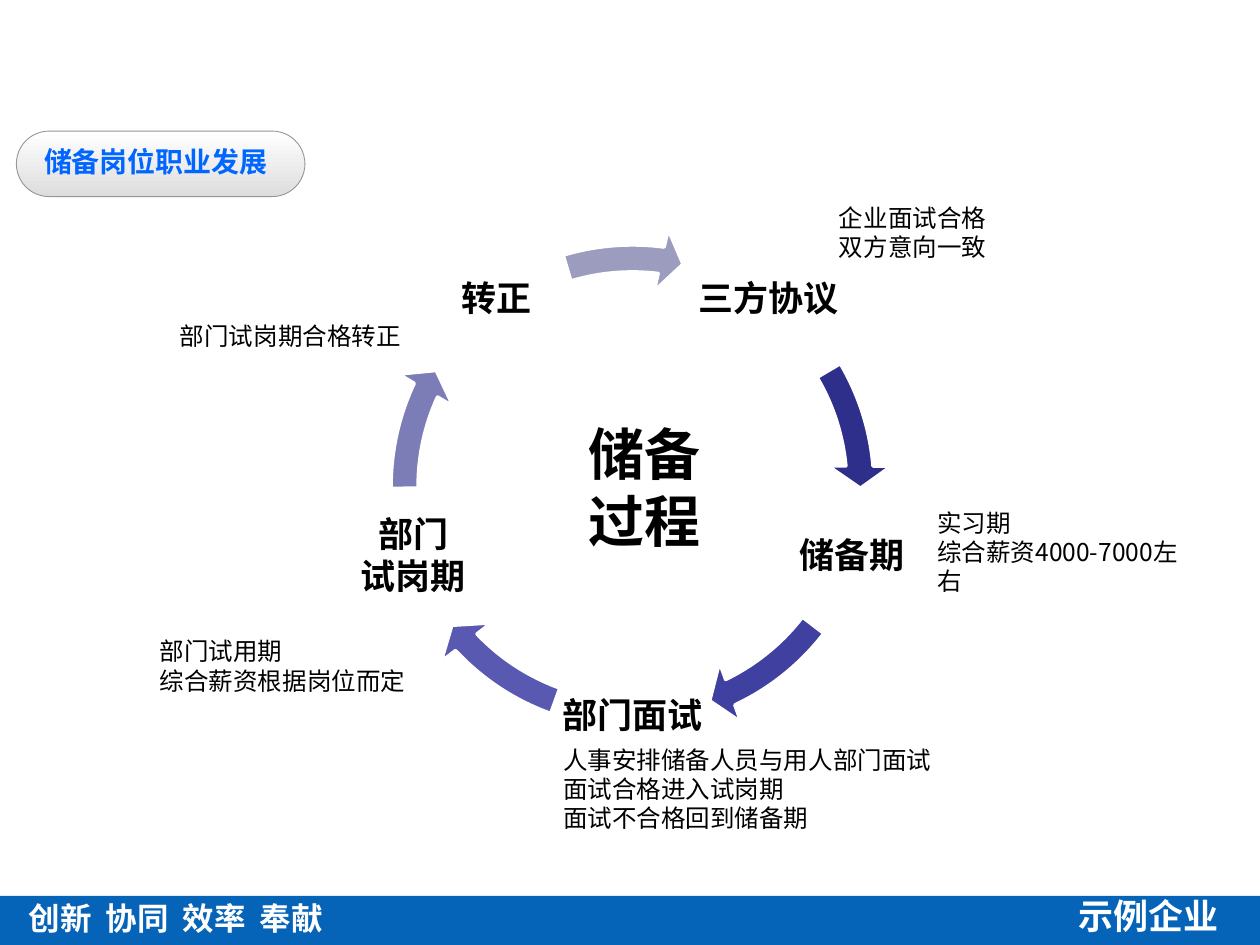
from lxml import etree
from pptx import Presentation
from pptx.dml.color import RGBColor
from pptx.enum.shapes import MSO_SHAPE
from pptx.enum.text import MSO_ANCHOR, PP_ALIGN
from pptx.oxml.ns import qn
from pptx.util import Inches, Pt

FONT = "Noto Sans CJK SC"
WHITE = RGBColor(0xFF, 0xFF, 0xFF)
BLACK = RGBColor(0x00, 0x00, 0x00)
FOOTER_BLUE = RGBColor(0x05, 0x63, 0xB8)
TITLE_BLUE = RGBColor(0x00, 0x66, 0xFF)
PILL_GREY = RGBColor(0xDD, 0xDD, 0xDD)
PILL_EDGE = RGBColor(0x96, 0x96, 0x96)

WIDTH, HEIGHT = 10, 7.5
FOOTER_TOP = 7.11
PILL = (0.13, 1.04, 2.29, 0.52)
RING = (2.96, 1.8, 4.12, 4.12)
STAGE_HEIGHT = 1.1
UPPER_ROW, MIDDLE_ROW, LOWER_ROW = 1.83, 3.87, 5.14
ANGLE_UNIT = 0.6  # one degree as an adjustment value

# left, top, width, lines
STAGES = [
    (5.43, UPPER_ROW, 1.34, ["三方协议"]),
    (6.25, MIDDLE_ROW, 1.02, ["储备期"]),
    (4.4, LOWER_ROW, 1.24, ["部门面试"]),
    (2.68, MIDDLE_ROW, 1.2, ["部门", "试岗期"]),
    (3.39, UPPER_ROW, 1.1, ["转正"]),
]

# start and end in degrees, colour
ARROWS = [
    (329.44, 354.88, RGBColor(0x2E, 0x2E, 0x8B)),
    (37.56, 64.6, RGBColor(0x40, 0x40, 0xA1)),
    (109.8, 136.84, RGBColor(0x59, 0x59, 0xB1)),
    (179.52, 204.96, RGBColor(0x7C, 0x7C, 0xB7)),
    (253.31, 277.23, RGBColor(0x9C, 0x9C, 0xBF)),
]

# left, top, width, height, lines
NOTES = [
    (6.56, 1.56, 1.48, 0.57, ["企业面试合格", "双方意向一致"]),
    (7.34, 3.98, 2.27, 0.57, ["实习期", "综合薪资4000-7000左右"]),
    (4.37, 5.86, 3.28, 0.81,
     ["人事安排储备人员与用人部门面试", "面试合格进入试岗期", "面试不合格回到储备期"]),
    (1.17, 5, 2.27, 0.57, ["部门试用期", "综合薪资根据岗位而定"]),
    (1.33, 2.5, 2.03, 0.34, ["部门试岗期合格转正"]),
]


def inches(place):
    return [Inches(length) for length in place]


def style_paragraph(para, size, color, bold):
    font = para.font
    font.size, font.bold, font.color.rgb = Pt(size), bold, color
    font.name = FONT
    latin = para._p.pPr.find(qn("a:defRPr")).find(qn("a:latin"))
    east_asian = etree.Element(qn("a:ea"), typeface=FONT)
    latin.addnext(east_asian)


def set_margins(frame, side, end):
    frame.margin_left = frame.margin_right = Inches(side)
    frame.margin_top = frame.margin_bottom = Inches(end)


def add_tab_stops(para, step, count):
    stops = etree.SubElement(para._p.get_or_add_pPr(), qn("a:tabLst"))
    for number in range(1, count + 1):
        etree.SubElement(stops, qn("a:tab"), pos=str(Inches(step * number)), algn="l")


def add_text(page, place, lines, size, color=BLACK, bold=False,
             align=PP_ALIGN.LEFT, margins=(0.1, 0.05), anchor=MSO_ANCHOR.TOP,
             line_spacing=None, gap=0, tab_step=None):
    frame = page.shapes.add_textbox(*inches(place)).text_frame
    frame.word_wrap = True
    frame.vertical_anchor = anchor
    set_margins(frame, *margins)
    for index, line in enumerate(lines):
        para = frame.add_paragraph() if index else frame.paragraphs[0]
        para.text = line
        para.alignment = align
        if line_spacing:
            para.line_spacing = line_spacing
        if index:
            para.space_before = Pt(gap)
        if tab_step:
            add_tab_stops(para, tab_step, line.count("\t"))
        style_paragraph(para, size, color, bold)


def add_shape(page, kind, place, color=None):
    shape = page.shapes.add_shape(kind, *inches(place))
    shape.shadow.inherit = False
    if color is not None:
        shape.fill.solid()
        shape.fill.fore_color.rgb = color
    return shape


def add_footer(page):
    bar = add_shape(page, MSO_SHAPE.RECTANGLE,
                    (0, FOOTER_TOP, WIDTH, HEIGHT - FOOTER_TOP), FOOTER_BLUE)
    bar.line.fill.background()
    add_text(page, (0.15, 7.09, 3.61, 0.39), ["创新\t协同\t效率\t奉献"], 18, WHITE, True,
             margins=(0.08, 0.04), anchor=MSO_ANCHOR.MIDDLE, tab_step=0.61)
    add_text(page, (8.46, 7.05, 1.42, 0.44), ["示例企业"], 20, WHITE, True)


def add_cycle_arrow(page, start, end, color):
    arrow = add_shape(page, MSO_SHAPE.CIRCULAR_ARROW, RING, color)
    values = (0.052, 5.6 * ANGLE_UNIT, end * ANGLE_UNIT, start * ANGLE_UNIT, 0.061)
    for index, value in enumerate(values):
        arrow.adjustments[index] = value
    arrow.line.color.rgb = WHITE
    arrow.line.width = Pt(2)


def add_title(page, text):
    pill = add_shape(page, MSO_SHAPE.ROUNDED_RECTANGLE, PILL)
    pill.adjustments[0] = 0.5
    pill.fill.gradient()
    pill.fill.gradient_angle = 270
    for stop, color, position in zip(pill.fill.gradient_stops, (WHITE, PILL_GREY), (0, 1)):
        stop.color.rgb = color
        stop.position = position
    pill.line.color.rgb = PILL_EDGE
    pill.line.width = Pt(0.5)

    title = page.shapes.title
    title.left, title.top, title.width, title.height = inches(PILL)
    frame = title.text_frame
    frame.text = text
    frame.vertical_anchor = MSO_ANCHOR.MIDDLE
    set_margins(frame, 0.22, 0.05)
    para = frame.paragraphs[0]
    para.alignment = PP_ALIGN.LEFT
    para.line_spacing = 0.9
    style_paragraph(para, 16, TITLE_BLUE, True)
    pill._element.addnext(title._element)


def main():
    deck = Presentation()
    deck.slide_width, deck.slide_height = Inches(WIDTH), Inches(HEIGHT)
    page = deck.slides.add_slide(deck.slide_layouts[5])
    add_footer(page)
    for (left, top, width, lines), arrow in zip(STAGES, ARROWS):
        add_text(page, (left, top, width, STAGE_HEIGHT), lines, 20, bold=True,
                 align=PP_ALIGN.CENTER, margins=(0.03, 0.03),
                 anchor=MSO_ANCHOR.MIDDLE, line_spacing=0.9, gap=2.5)
        add_cycle_arrow(page, *arrow)
    add_title(page, "储备岗位职业发展")
    add_text(page, (4.45, 3.28, 1.33, 1.51), ["储备过程"], 32, bold=True,
             align=PP_ALIGN.CENTER)
    for *place, lines in NOTES:
        add_text(page, place, lines, 14)
    deck.save("out.pptx")


if __name__ == "__main__":
    main()
